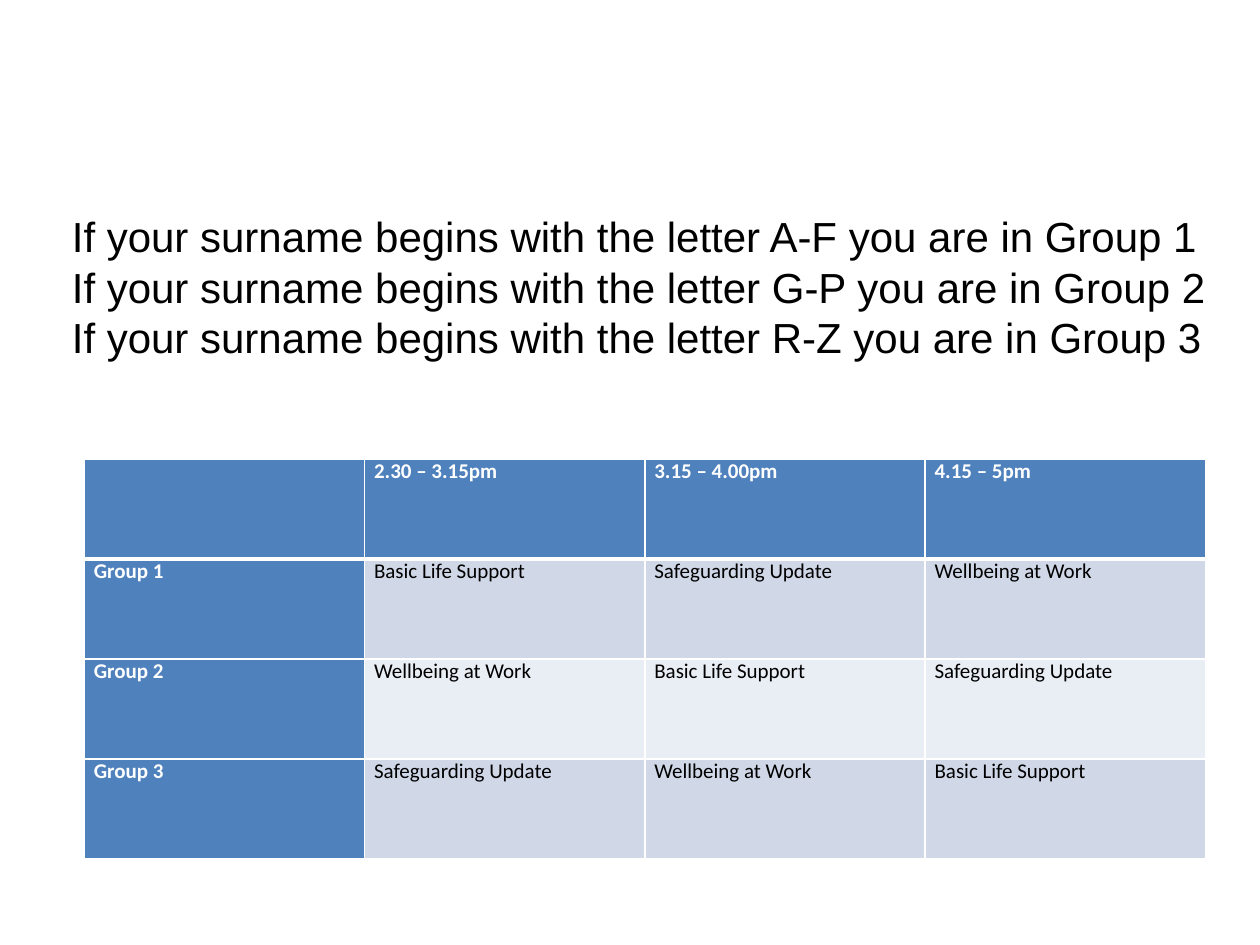
from lxml import etree
from pptx import Presentation
from pptx import util as u
from pptx.dml.color import RGBColor
from pptx.enum import text
from pptx.oxml import ns

COLOURS = {
    "black": "000000",
    "white": "FFFFFF",
    "header": "4F81BD",
    "band_dark": "D0D8E8",
    "band_light": "E9EDF4",
}


def colour(name):
    return RGBColor.from_string(COLOURS[name])


def write(para, words, font="Calibri", size=12, ink="black", bold=False):
    """Add one formatted span to a paragraph."""
    span = para.add_run()
    span.text = words
    span.font.name = font
    span.font.size = u.Pt(size)
    span.font.bold = bold
    span.font.color.rgb = colour(ink)


def add_border(cell, side, points):
    """Draw a white line on one side (L, R, T, B) of a cell."""
    properties = cell._tc.get_or_add_tcPr()
    line = etree.SubElement(properties, ns.qn(f"a:ln{side}"), w=str(u.Pt(points)))
    fill = etree.SubElement(line, ns.qn("a:solidFill"))
    etree.SubElement(fill, ns.qn("a:srgbClr"), val=COLOURS["white"])


class Builder:
    """Holds the table style and the current page."""

    inset = u.Cm(0.19)
    thin, thick = 1, 3

    def __init__(self, page):
        self.page = page

    def text_box(self, lines, left, top, width, height, **style):
        box = self.page.shapes.add_textbox(left, top, width, height)
        frame = box.text_frame
        frame.word_wrap = False
        frame.auto_size = text.MSO_AUTO_SIZE.SHAPE_TO_FIT_TEXT
        frame.vertical_anchor = text.MSO_ANCHOR.MIDDLE
        for index, words in enumerate(lines):
            para = frame.add_paragraph() if index else frame.paragraphs[0]
            write(para, words, **style)

    def table(self, rows, left, top, width, height):
        grid = self.page.shapes.add_table(
            len(rows), len(rows[0]), left, top, width, height).table
        grid.first_col = True
        for r, row in enumerate(rows):
            for c, words in enumerate(row):
                self.cell(grid.cell(r, c), words, r, c)

    def cell(self, cell, words, r, c):
        is_header = r == 0 or c == 0
        cell.margin_left = cell.margin_right = self.inset
        cell.margin_top = cell.margin_bottom = 0

        # Borders go before the fill; a thick line closes the header row
        add_border(cell, "L", self.thin)
        add_border(cell, "R", self.thin)
        add_border(cell, "T", self.thick if r == 1 else self.thin)
        add_border(cell, "B", self.thick if r == 0 else self.thin)

        band = "band_dark" if r % 2 else "band_light"
        cell.fill.solid()
        cell.fill.fore_color.rgb = colour("header" if is_header else band)
        if words:
            write(cell.text_frame.paragraphs[0], words,
                  ink="white" if is_header else "black", bold=is_header)


def main():
    deck = Presentation()
    deck.slide_width, deck.slide_height = u.Cm(25.4), u.Cm(19.05)
    builder = Builder(deck.slides.add_slide(deck.slide_layouts[6]))

    # Timetable: the sessions rotate one place for each group
    sessions = ["Basic Life Support", "Safeguarding Update", "Wellbeing at Work"]
    rows = [["", "2.30 – 3.15pm", "3.15 – 4.00pm", "4.15 – 5pm"]]
    for shift in range(3):
        rotated = sessions[-shift:] + sessions[:-shift] if shift else sessions
        rows.append([f"Group {shift + 1}"] + rotated)
    builder.table(rows, u.Cm(1.7), u.Cm(9.25), u.Cm(22.6), u.Cm(8.07))

    # Who belongs to which group
    lines = [f"If your surname begins with the letter {letters} you are in Group {number}"
             for number, letters in enumerate(["A-F", "G-P", "R-Z"], start=1)]
    builder.text_box(lines, u.Cm(1.2), u.Cm(4.11), u.Cm(23.6), u.Cm(3.33),
                     font="Arial", size=24)

    deck.save("out.pptx")


if __name__ == "__main__":
    main()
